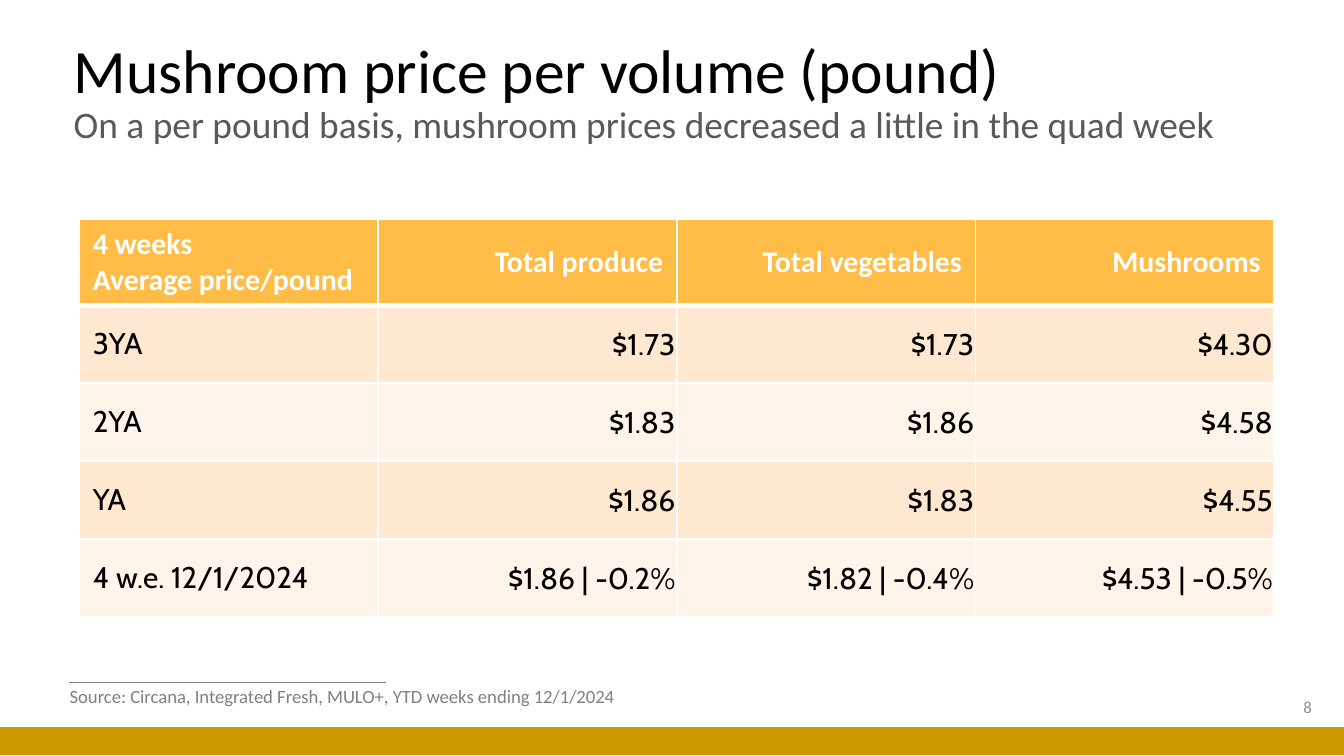
from dataclasses import dataclass

from lxml import etree
from pptx import Presentation
from pptx.dml.color import RGBColor
from pptx.enum.shapes import MSO_CONNECTOR, MSO_SHAPE
from pptx.enum.text import MSO_ANCHOR, MSO_AUTO_SIZE, PP_ALIGN
from pptx.oxml.ns import qn
from pptx.util import Inches, Pt

LEFT, RIGHT = PP_ALIGN.LEFT, PP_ALIGN.RIGHT
TOP, MIDDLE = MSO_ANCHOR.TOP, MSO_ANCHOR.MIDDLE
FIT_SHAPE = MSO_AUTO_SIZE.SHAPE_TO_FIT_TEXT
RECTANGLE, STRAIGHT = MSO_SHAPE.RECTANGLE, MSO_CONNECTOR.STRAIGHT

BLACK = RGBColor(0x00, 0x00, 0x00)
WHITE = RGBColor(0xFF, 0xFF, 0xFF)
DARK_GRAY = RGBColor(0x59, 0x59, 0x59)
GRAY = RGBColor(0x80, 0x80, 0x80)
LIGHT_GRAY = RGBColor(0x8C, 0x8C, 0x8C)
GOLD = RGBColor(0xCC, 0x99, 0x00)
ORANGE = RGBColor(0xFF, 0xBD, 0x47)
PEACH = RGBColor(0xFF, 0xE8, 0xCF)
CREAM = RGBColor(0xFF, 0xF4, 0xE9)


@dataclass
class PriceRow:
    period: str
    produce: str
    vegetables: str
    mushrooms: str

    def texts(self) -> list[str]:
        return [self.period, self.produce, self.vegetables, self.mushrooms]


HEADER = PriceRow("4 weeks\nAverage price/pound", "Total produce",
                  "Total vegetables", "Mushrooms")
PRICES = [
    PriceRow("3YA", "$1.73", "$1.73", "$4.30"),
    PriceRow("2YA", "$1.83", "$1.86", "$4.58"),
    PriceRow("YA", "$1.86", "$1.83", "$4.55"),
    PriceRow("4 w.e. 12/1/2024", "$1.86 | -0.2%", "$1.82 | -0.4%", "$4.53 | -0.5%"),
]


def add_text(p, text: str, *, size: float, color: RGBColor, font: str = "Calibri",
             bold: bool = False, align=LEFT) -> None:
    p.alignment = align
    r = p.add_run()
    r.text = text
    r.font.name = font
    r.font.size = Pt(size)
    r.font.bold = bold
    r.font.color.rgb = color


def add_box(s, x: float, y: float, w: float, h: float, anchor=MIDDLE, wrap: bool = True):
    tf = s.shapes.add_textbox(Inches(x), Inches(y), Inches(w), Inches(h)).text_frame
    tf.word_wrap = wrap
    tf.vertical_anchor = anchor
    return tf


def set_borders(cell, bottom: float) -> None:
    tc_pr = cell._tc.get_or_add_tcPr()
    widths = {"a:lnL": 1, "a:lnR": 1, "a:lnT": 1, "a:lnB": bottom}
    for i, (tag, width) in enumerate(widths.items()):
        ln = etree.Element(qn(tag), w=str(Pt(width)))
        fill = etree.SubElement(ln, qn("a:solidFill"))
        etree.SubElement(fill, qn("a:srgbClr"), val=str(WHITE))
        tc_pr.insert(i, ln)


def fill_cell(cell, text: str, fill: RGBColor, header: bool, label: bool) -> None:
    cell.fill.solid()
    cell.fill.fore_color.rgb = fill
    set_borders(cell, 3 if header else 1)
    cell.vertical_anchor = MIDDLE
    if not header and not label:
        cell.margin_left = cell.margin_right = cell.margin_top = Inches(0.01)
        cell.margin_bottom = 0
    tf = cell.text_frame
    for i, line in enumerate(text.split("\n")):
        p = tf.add_paragraph() if i else tf.paragraphs[0]
        add_text(p, line, size=16, color=WHITE if header else BLACK,
                 font="Calibri" if header else "Cabin", bold=header,
                 align=LEFT if label else RIGHT)


def add_price_table(s) -> None:
    rows = [HEADER, *PRICES]
    table = s.shapes.add_table(len(rows), 4, Inches(0.59), Inches(1.63),
                               Inches(8.89), Inches(2.96)).table
    for i, row in enumerate(rows):
        table.rows[i].height = Inches(0.58 if i else 0.64)
        fill = (PEACH if i % 2 else CREAM) if i else ORANGE
        for j, text in enumerate(row.texts()):
            fill_cell(table.cell(i, j), text, fill, header=i == 0, label=j == 0)


def add_footer(s) -> None:
    rule = s.shapes.add_connector(STRAIGHT, Inches(0.51), Inches(5.08),
                                  Inches(2.87), Inches(5.08))
    rule.line.color.rgb = GRAY
    rule.line.width = Pt(0.5)
    etree.SubElement(rule._element.spPr, qn("a:effectLst"))

    band = s.shapes.add_shape(RECTANGLE, 0, Inches(5.41), Inches(10), Inches(0.21))
    band.shadow.inherit = False
    band.fill.solid()
    band.fill.fore_color.rgb = GOLD
    band.line.fill.background()

    tf = add_box(s, 7.61, 5.11, 2.25, 0.3)
    add_text(tf.paragraphs[0], "8", size=9, color=LIGHT_GRAY, align=RIGHT)

    tf = add_box(s, 0.42, 5.05, 4.31, 0.27, anchor=TOP, wrap=False)
    tf.auto_size = FIT_SHAPE
    add_text(tf.paragraphs[0],
             "Source: Circana, Integrated Fresh, MULO+, YTD weeks ending 12/1/2024",
             size=10, color=GRAY)


def add_title(s) -> None:
    p = add_box(s, 0.45, 0.22, 8.74, 0.95).paragraphs[0]
    p.line_spacing = 0.9
    add_text(p, "Mushroom price per volume (pound)", size=33, color=BLACK)
    p.add_line_break()
    add_text(p, "On a per pound basis, mushroom prices decreased a little in the quad week",
             size=20, color=DARK_GRAY)


def main() -> None:
    prs = Presentation()
    prs.slide_width = Inches(10)
    prs.slide_height = prs.slide_width * 9 // 16
    s = prs.slides.add_slide(prs.slide_layouts[6])
    add_title(s)
    add_price_table(s)
    add_footer(s)
    prs.save("out.pptx")


if __name__ == "__main__":
    main()
